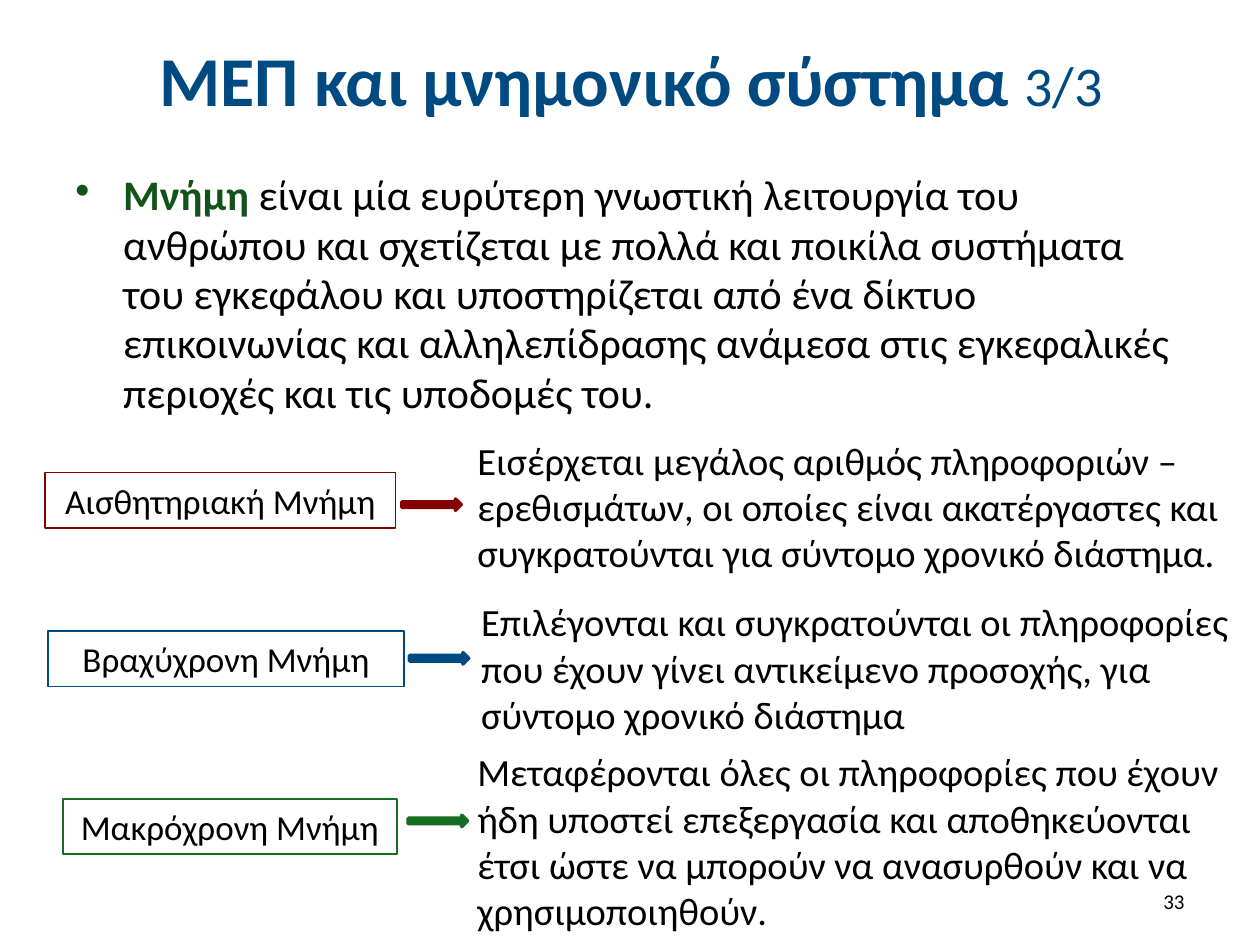
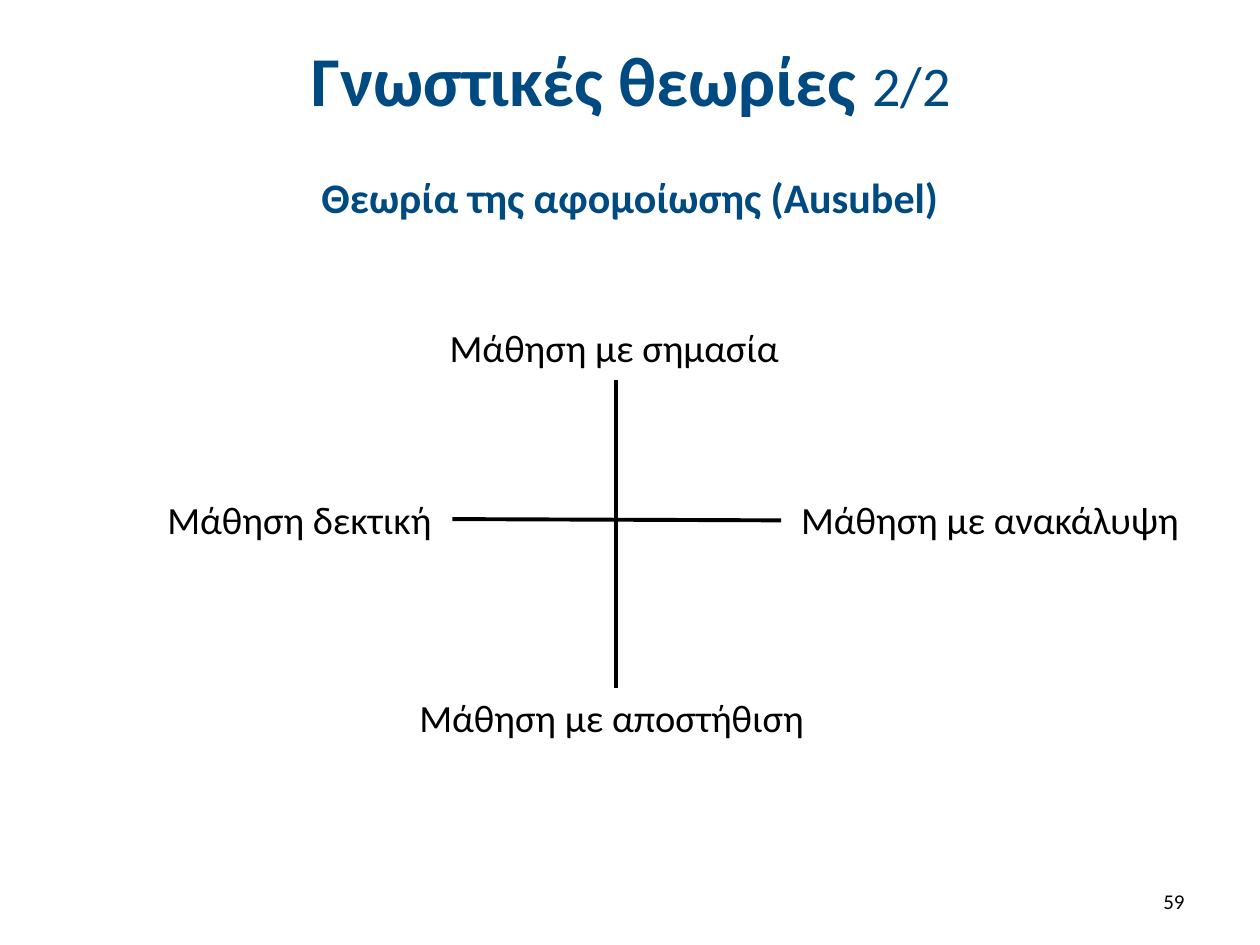
import pptx
import pptx.util
import pptx.dml.color
import pptx.enum.shapes
import pptx.enum.text
import pptx.oxml
import pptx.oxml.ns
from pptx.util import Inches

# Shared look
FONT = "Calibri"
BLACK, BLUE, RED = "000000", "004A82", "820000"
GREEN, DARK = "166C20", "115319"
ALIGN = pptx.enum.text.PP_ALIGN
MIDDLE = pptx.enum.text.MSO_ANCHOR.MIDDLE
SHAPE = pptx.enum.shapes.MSO_SHAPE


def color(text):
    return pptx.dml.color.RGBColor.from_string(text)


def apply(target, values):
    for name, value in values.items():
        setattr(target, name, value)


# Element kinds
def write(shape, runs, frame=None, **para):
    """Fill a shape with one paragraph of (text, size, colour, bold) runs."""
    body = shape.text_frame
    apply(body, {"word_wrap": True, **(frame or {})})
    line = body.paragraphs[0]
    apply(line, para)
    for text, size, tint, bold in runs:
        run = line.add_run()
        run.text = text
        apply(run.font, {"name": FONT, "size": pptx.util.Pt(size), "bold": bold})
        run.font.color.rgb = color(tint)
    return line


def add_text(slide, box, runs, frame=None, **para):
    shape = slide.shapes.add_textbox(*map(Inches, box))
    return write(shape, runs, frame, **para)


def add_bullet(line):
    props = line._p.get_or_add_pPr()
    for name, inch in {"marL": 0.38, "indent": -0.38}.items():
        props.set(name, str(Inches(inch)))
    mark = pptx.oxml.parse_xml(
        f'<a:buChar {pptx.oxml.ns.nsdecls("a")} char="•"/>')
    props.append(mark)


def add_block(slide, kind, box, tint, width, fill=None):
    shape = slide.shapes.add_shape(kind, *map(Inches, box))
    shape.shadow.inherit = False
    if fill:
        shape.fill.solid()
        shape.fill.fore_color.rgb = color(fill)
    else:
        shape.fill.background()
    shape.line.color.rgb = color(tint)
    shape.line.width = pptx.util.Pt(width)
    return shape


def add_axis(slide, *ends):
    line = slide.shapes.add_connector(
        pptx.enum.shapes.MSO_CONNECTOR.STRAIGHT, *map(Inches, ends))
    line.line.color.rgb = color(BLACK)
    line.line.width = pptx.util.Pt(2.25)
    line._element.spPr.append(pptx.oxml.parse_xml(
        f'<a:effectLst {pptx.oxml.ns.nsdecls("a")}/>'))


def add_slide(deck, title, part, page):
    """Start a blank slide with its title and page number."""
    slide = deck.slides.add_slide(deck.slide_layouts[6])
    add_text(slide, (0.51, 0.13, 9, 0.99),
             [(title + " ", 40, BLUE, True), (part, 32, BLUE, False)],
             {"vertical_anchor": MIDDLE}, alignment=ALIGN.CENTER)
    add_text(slide, (7.17, 6.95, 2.33, 0.4), [(page, 12, BLACK, False)],
             {"vertical_anchor": MIDDLE}, alignment=ALIGN.RIGHT)
    return slide


def add_memory(slide, tint, name, box, arrow, note, text):
    """One kind of memory: framed name, arrow and explanation."""
    frame = add_block(slide, SHAPE.RECTANGLE, (*box, 0.44), tint, 1)
    write(frame, [(name, 20, BLACK, False)], alignment=ALIGN.CENTER)
    add_block(slide, SHAPE.RIGHT_ARROW, (*arrow, 0.47, 0.09), tint, 2, tint)
    add_text(slide, (*note, 6.2, 1.28), [(text, 22, BLACK, False)],
             space_before=pptx.util.Pt(12))


# Slides
def build_memory(deck):
    slide = add_slide(deck, "ΜΕΠ και μνημονικό σύστημα", "3/3", "33")
    intro = add_text(
        slide, (0.5, 1.31, 9, 2.13),
        [("Μνήμη", 24, DARK, True),
         (" είναι μία ευρύτερη γνωστική λειτουργία του ανθρώπου και "
          "σχετίζεται με πολλά και ποικίλα συστήματα του εγκεφάλου και "
          "υποστηρίζεται από ένα δίκτυο επικοινωνίας και αλληλεπίδρασης "
          "ανάμεσα στις εγκεφαλικές περιοχές και τις υποδομές του.",
          24, BLACK, False)],
        space_before=pptx.util.Pt(12), line_spacing=0.98)
    add_bullet(intro)
    kinds = [
        (RED, "Αισθητηριακή Μνήμη", (0.36, 3.75, 2.78), (3.19, 3.96),
         (3.69, 3.42),
         "Εισέρχεται μεγάλος αριθμός πληροφοριών – ερεθισμάτων, οι οποίες "
         "είναι ακατέργαστες και συγκρατούνται για σύντομο χρονικό διάστημα."),
        (BLUE, "Βραχύχρονη Μνήμη", (0.38, 5.01, 2.83), (3.25, 5.18),
         (3.72, 4.7),
         "Επιλέγονται και συγκρατούνται οι πληροφορίες που έχουν γίνει "
         "αντικείμενο προσοχής, για σύντομο χρονικό διάστημα"),
        (GREEN, "Μακρόχρονη Μνήμη", (0.5, 6.34, 2.65), (3.24, 6.47),
         (3.69, 5.89),
         "Μεταφέρονται όλες οι πληροφορίες που έχουν ήδη υποστεί επεξεργασία "
         "και αποθηκεύονται έτσι ώστε να μπορούν να ανασυρθούν και να "
         "χρησιμοποιηθούν."),
    ]
    for kind in kinds:
        add_memory(slide, *kind)


def build_theory(deck):
    slide = add_slide(deck, "Γνωστικές θεωρίες", "2/2", "59")
    add_text(slide, (0.5, 1.31, 9, 0.79),
             [("Θεωρία της αφομοίωσης (Ausubel)", 24, BLUE, True)],
             alignment=ALIGN.CENTER, space_before=pptx.util.Pt(12))
    # Crossed axes with a label at each end
    add_axis(slide, 4.89, 3.02, 4.89, 5.46)
    add_axis(slide, 6.2, 4.13, 3.59, 4.12)
    labels = [
        ("Μάθηση με σημασία", 3.47, 2.52, 2.85),
        ("Μάθηση με αποστήθιση", 3.23, 5.46, 3.3),
        ("Μάθηση με ανακάλυψη", 6.26, 3.89, 3.24),
        ("Μάθηση δεκτική", 1.23, 3.89, 2.32),
    ]
    for text, *box in labels:
        add_text(slide, (*box, 0.47), [(text, 22, BLACK, False)],
                 {"word_wrap": False})


def main():
    deck = pptx.Presentation()
    apply(deck, {"slide_width": Inches(10), "slide_height": Inches(7.5)})
    build_memory(deck)
    build_theory(deck)
    deck.save("out.pptx")


if __name__ == "__main__":
    main()
